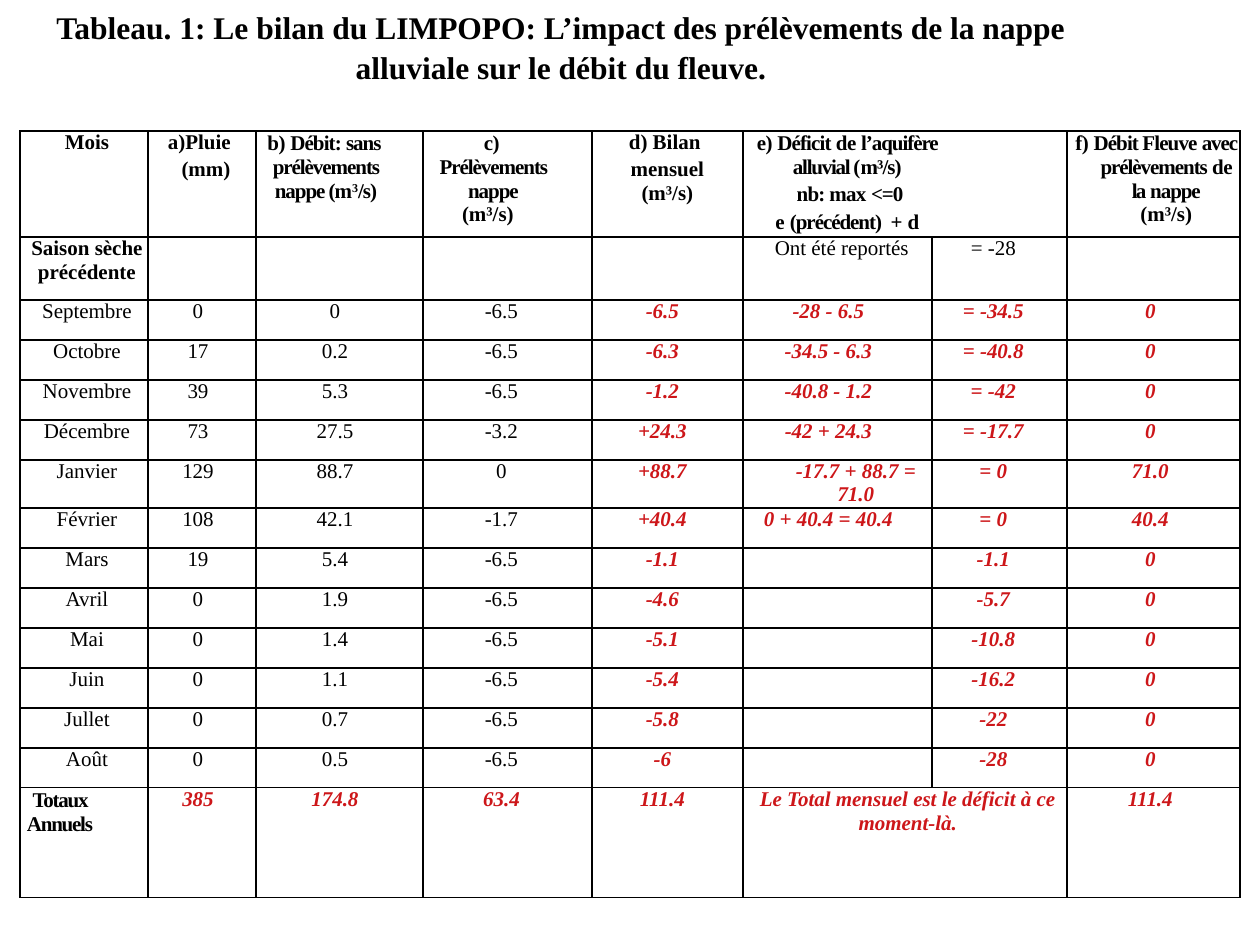
from lxml import etree
from pptx import Presentation
from pptx import util as u
from pptx.dml.color import RGBColor
from pptx.enum import text
from pptx.oxml import ns

EMU_PER_PX = 914400 / 126
FONT = "Times New Roman"
BLACK = RGBColor(0x00, 0x00, 0x00)
RED = RGBColor(0xCD, 0x16, 0x19)
WHITE = RGBColor(0xFF, 0xFF, 0xFF)


def px(n):
    return u.Emu(round(n * EMU_PER_PX))


def write(cell, paragraphs, color=BLACK, bold=False, italic=False, align=text.PP_ALIGN.CENTER):
    """Fill a cell; each paragraph is (runs, options) and each run is (text, spacing[, baseline])."""
    frame = cell.text_frame
    for i, (runs, options) in enumerate(paragraphs):
        p = frame.paragraphs[0] if i == 0 else frame.add_paragraph()
        p.alignment = align
        if i:
            p.space_before = u.Pt(options.get("before", 1.9))
        if "line" in options:
            p.line_spacing = options["line"]
        props = p._p.get_or_add_pPr()
        for side, key in (("marL", "left"), ("marR", "right"), ("indent", "indent")):
            props.set(side, str(px(options.get(key, 0))))
        if "number" in options:
            etree.SubElement(props, ns.qn("a:buFont"), typeface="+mj-lt")
            etree.SubElement(props, ns.qn("a:buAutoNum"), type=options["number"])
        p.font.name, p.font.size = FONT, u.Pt(12)
        p.font.bold, p.font.italic = bold, italic
        p.font.color.rgb = color
        for words, spacing, *baseline in runs:
            run = p.add_run()
            run.text = words
            run_props = run._r.get_or_add_rPr()
            if spacing:
                run_props.set("spc", str(round(spacing * 100)))
            if baseline:
                run_props.set("baseline", str(baseline[0] * 1000))


HANGING = {"left": 11, "indent": -4, "line": 1.03}
DEFICIT = {"right": 115, "line": 1.03}
HEADERS = {
    0: [([("Mois", 0)], {"left": 6})],
    1: [([("Pluie ", 0)], {"number": "alphaLcParenR"}),
        ([("(mm)", 0)], {"left": 39, "indent": -31})],
    2: [([("b) ", -0.3), ("Débit: ", -0.5), ("sans prélèvements nappe (m", -0.6),
          ("3", -0.6, 30), ("/s)", -0.6)], {**HANGING, "right": 38})],
    3: [([("c) ", -0.3), ("Prélèvements nappe", -0.6)], {**HANGING, "right": 39}),
        ([("(m³/s)", 0)], {"right": 39, "before": 0.1})],
    4: [([("d) Bilan ", 0)], {}), ([("mensuel", 0)], {}), ([("(m³/s)", 0)], {"before": 0.4})],
    5: [([("e) ", -0.3), ("Déficit ", -0.5), ("de ", -0.3), ("l’aquifère ", -0.6),
          ("alluvial (", -0.7), ("m³/s)", -0.5)], DEFICIT),
        ([(" ", -0.5), ("nb: max ", -0.4), ("<=0", -0.6)], DEFICIT),
        ([("e ", 0), ("(précédent)  ", -0.6), ("+ d", 0)], DEFICIT)],
    7: [([("f) ", -0.3), ("Débit Fleuve ", -0.5), ("avec prélèvements ", -0.6),
          ("de ", -0.3), ("la ", -0.9), ("nappe", -0.6)],
         {"left": 26, "indent": -20, "line": 1.03}),
        ([("(m³/s)", 0)], {"left": 26, "before": 0.1})],
}
MONTHS = [
    ("Septembre", "0", "0", "-6.5", "-6.5", "-28 - 6.5", "= -34.5", "0"),
    ("Octobre", "17", "0.2", "-6.5", "-6.3", "-34.5 - 6.3", "= -40.8", "0"),
    ("Novembre", "39", "5.3", "-6.5", "-1.2", "-40.8 - 1.2", "= -42", "0"),
    ("Décembre", "73", "27.5", "-3.2", "+24.3", "-42 + 24.3", "= -17.7", "0"),
    ("Janvier", "129", "88.7", "0", "+88.7", "-17.7 + 88.7 = 71.0", "= 0", "71.0"),
    ("Février", "108", "42.1", "-1.7", "+40.4", "0 + 40.4 = 40.4", "= 0", "40.4"),
    ("Mars", "19", "5.4", "-6.5", "-1.1", "", "-1.1", "0"),
    ("Avril", "0", "1.9", "-6.5", "-4.6", "", "-5.7", "0"),
    ("Mai", "0", "1.4", "-6.5", "-5.1", "", "-10.8", "0"),
    ("Juin", "0", "1.1", "-6.5", "-5.4", "", "-16.2", "0"),
    ("Jullet", "0", "0.7", "-6.5", "-5.8", "", "-22", "0"),
    ("Août", "0", "0.5", "-6.5", "-6", "", "-28", "0"),
]
TOTALS = {1: "385", 2: "174.8", 3: "63.4", 4: "111.4", 7: "111.4"}
COLUMN_WIDTHS = [128, 108, 167, 169, 151, 189, 135, 173]
ROW_HEIGHTS = [106, 63] + [48 if month[0] == "Janvier" else 40 for month in MONTHS] + [110]
RIGHT_INDENTS = [0, 8, 9, 12, 10, 18, 12, 6]

prs = Presentation()
prs.slide_width, prs.slide_height = px(1260), px(945)
slide = prs.slides.add_slide(prs.slide_layouts[5])

title = slide.shapes.title
title.left, title.top, title.width, title.height = px(20), px(0), px(1082), px(90)
title.text_frame.auto_size = text.MSO_AUTO_SIZE.NONE
title.text_frame.vertical_anchor = text.MSO_ANCHOR.TOP
heading = title.text_frame.paragraphs[0]
heading.text = ("Tableau. 1: Le bilan du LIMPOPO: L’impact des prélèvements "
                "de la nappe alluviale sur le débit du fleuve.")
heading.alignment = text.PP_ALIGN.CENTER
heading.line_spacing = 1.05
heading.font.name, heading.font.size, heading.font.bold = FONT, u.Pt(18), True
heading.font.color.rgb = BLACK

balance = slide.shapes.add_table(
    len(ROW_HEIGHTS), len(COLUMN_WIDTHS), px(20), px(131),
    px(sum(COLUMN_WIDTHS)), px(sum(ROW_HEIGHTS))).table
balance.first_row = balance.horz_banding = False
for column, width in zip(balance.columns, COLUMN_WIDTHS):
    column.width = px(width)
for row, height in zip(balance.rows, ROW_HEIGHTS):
    row.height = px(height)

for cell in balance.iter_cells():
    cell.margin_left = cell.margin_right = cell.margin_top = cell.margin_bottom = 0
    cell_props = cell._tc.get_or_add_tcPr()
    for edge in ("a:lnL", "a:lnR", "a:lnT", "a:lnB"):
        line = etree.SubElement(cell_props, ns.qn(edge), w=str(u.Pt(1)))
        solid = etree.SubElement(line, ns.qn("a:solidFill"))
        etree.SubElement(solid, ns.qn("a:srgbClr"), val=str(BLACK))
    cell.fill.solid()
    cell.fill.fore_color.rgb = WHITE

last = len(ROW_HEIGHTS) - 1
for r in (0, last):
    balance.cell(r, 5).merge(balance.cell(r, 6))

for c, paragraphs in HEADERS.items():
    write(balance.cell(0, c), paragraphs, bold=True)

write(balance.cell(1, 0), [([("Saison sèche", 0)], {"left": 6}),
                           ([("précédente", 0)], {"left": 6, "before": 0.4})], bold=True)
write(balance.cell(1, 5), [([("Ont été reportés", 0)], {"right": 23})],
      align=text.PP_ALIGN.RIGHT)
write(balance.cell(1, 6), [([("= -28", 0)], {"right": 12})])

for r, month in enumerate(MONTHS, start=2):
    for c, value in enumerate(month):
        if not value:
            continue
        indents = {"left": 0 if c else 6, "right": RIGHT_INDENTS[c]}
        if value.endswith("= 71.0"):
            indents = {"left": 37}
        computed = c >= 4
        write(balance.cell(r, c), [([(value, 0)], indents)],
              RED if computed else BLACK, computed, computed)

write(balance.cell(last, 0),
      [([("Totaux Annuels", -0.7)], {"left": 6, "right": 54, "line": 1.03})], bold=True)
for c, total in TOTALS.items():
    write(balance.cell(last, c), [([(total, 0)], {"right": RIGHT_INDENTS[c]})], RED, True, True)
write(balance.cell(last, 5),
      [([("Le Total mensuel est le déficit à ce", 0)], {"left": 6}),
       ([("moment-là.", 0)], {"left": 6, "before": 0.4})], RED, True, True)

prs.save("out.pptx")
